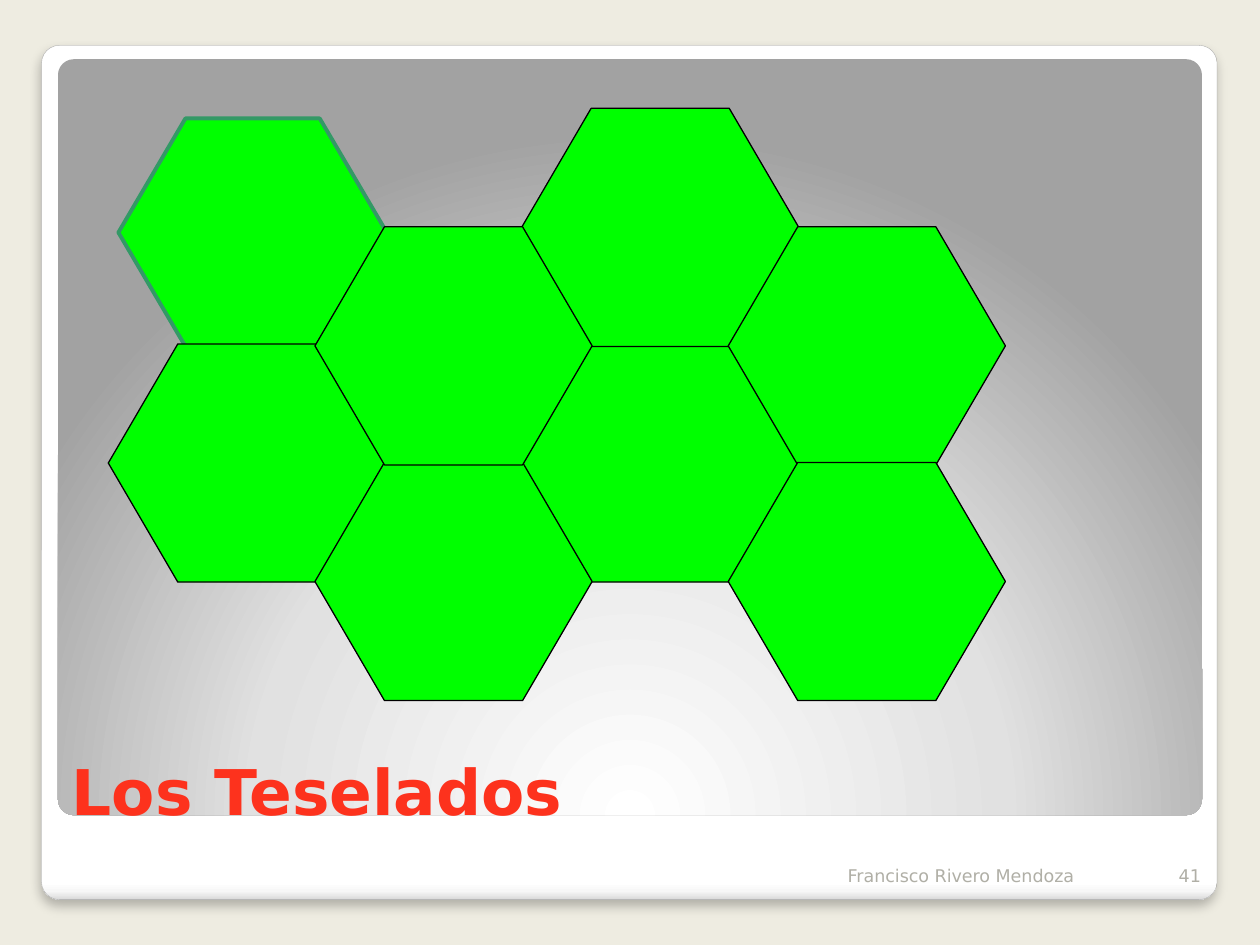
from dataclasses import dataclass

from lxml import etree
from pptx import Presentation
from pptx import util as u
from pptx.dml.color import RGBColor
from pptx.enum import shapes, text
from pptx.oxml import parse_xml
from pptx.oxml.ns import nsdecls, qn

FONT = "DejaVu Sans"
GREEN, BLACK, TEAL = "00FF00", "000000", "339966"
RED, GREY = "FD321D", "B0AFA6"
COL_STEP, ROW_STEP, ODD_DROP = 1.64, 1.87, 0.94


@dataclass
class Box:
    left: float
    top: float
    width: float
    height: float

    def lengths(self) -> list:
        return [u.Inches(v) for v in (self.left, self.top, self.width, self.height)]


@dataclass
class Hexagon:
    box: Box
    adj: float = 0.292
    line: str = BLACK
    line_width: float = 0.75


@dataclass
class Footer:
    box: Box
    words: str
    align: text.PP_ALIGN


def rgb(value: str) -> RGBColor:
    return RGBColor.from_string(value)


def tile(col: int, row: int) -> Hexagon:
    """Place a hexagon on the honeycomb; odd columns sit half a cell lower."""
    top = 0.86 + ROW_STEP * row + ODD_DROP * (col % 2)
    return Hexagon(Box(0.86 + COL_STEP * col, top, 2.2, 1.89))


def add_panel(s, box: Box, stops: list, direction: str):
    sp = s.shapes.add_shape(shapes.MSO_SHAPE.ROUNDED_RECTANGLE, *box.lengths())
    sp.adjustments[0] = 0.021
    sp.shadow.inherit = False
    sp.line.fill.background()
    gs = "".join(f'<a:gs pos="{pos * 1000}"><a:srgbClr val="{color}"/></a:gs>'
                 for pos, color in stops)
    grad = parse_xml(f'<a:gradFill {nsdecls("a")} rotWithShape="1">'
                     f'<a:gsLst>{gs}</a:gsLst>{direction}</a:gradFill>')
    sp.element.spPr.find(qn("a:prstGeom")).addnext(grad)
    return sp


def add_soft_shadow(sp) -> None:
    effects = sp.element.spPr.find(qn("a:effectLst"))
    shadow = etree.SubElement(effects, qn("a:outerShdw"), blurRad=str(u.Pt(6)),
                              dist=str(u.Pt(4)), dir="5400000",
                              algn="t", rotWithShape="0")
    color = etree.SubElement(shadow, qn("a:srgbClr"), val=BLACK)
    etree.SubElement(color, qn("a:alpha"), val="25000")


def add_hexagon(s, h: Hexagon) -> None:
    sp = s.shapes.add_shape(shapes.MSO_SHAPE.HEXAGON, *h.box.lengths())
    sp.adjustments[0] = h.adj
    sp.adjustments[1] = 1.1547
    sp.shadow.inherit = False
    sp.fill.solid()
    sp.fill.fore_color.rgb = rgb(GREEN)
    sp.line.color.rgb = rgb(h.line)
    sp.line.width = u.Pt(h.line_width)


def write(sp, words: str, size: float, color: str,
          align: text.PP_ALIGN, bold: bool = False) -> None:
    tf = sp.text_frame
    tf.word_wrap = True
    tf.auto_size = text.MSO_AUTO_SIZE.NONE
    tf.vertical_anchor = text.MSO_ANCHOR.BOTTOM
    p = tf.paragraphs[0]
    p.alignment = align
    r = p.add_run()
    r.text = words
    r.font.name = FONT
    r.font.size = u.Pt(size)
    r.font.bold = bold
    r.font.color.rgb = rgb(color)


def add_title(s, box: Box, words: str) -> None:
    title = s.shapes.title
    title.left, title.top, title.width, title.height = box.lengths()
    write(title, words, 36, RED, text.PP_ALIGN.LEFT, bold=True)
    s.shapes.element.append(title.element)  # in front of the panels


def add_footer(s, f: Footer) -> None:
    write(s.shapes.add_textbox(*f.box.lengths()), f.words, 10, GREY, f.align)


def main() -> None:
    prs = Presentation()
    prs.slide_width, prs.slide_height = u.Inches(10), u.Inches(7.5)
    s = prs.slides.add_slide(prs.slide_layouts[5])
    s.background.fill.solid()
    s.background.fill.fore_color.rgb = rgb("EEECE1")

    card = add_panel(s, Box(0.33, 0.36, 9.33, 6.78),
                     [(0, "FFFFFF"), (98, "FFFFFF"), (99, "F7F7F7"), (100, "DADADA")],
                     '<a:lin ang="5400000" scaled="0"/>')
    card.line.color.rgb = rgb("A4A4A4")
    card.line.width = u.Pt(0.16)
    add_soft_shadow(card)
    add_panel(s, Box(0.46, 0.47, 9.08, 6),
              [(0, "FFFFFF"), (55, "E1E1E1"), (100, "A2A2A2")],
              '<a:path path="circle"><a:fillToRect l="50000" t="175000" '
              'r="50000" b="-75000"/></a:path>')

    add_title(s, Box(0.47, 5.47, 8.95, 1.15), "Los Teselados")

    add_hexagon(s, Hexagon(Box(0.94, 0.94, 2.13, 1.81), 0.294, TEAL, 2.25))
    for col, row in [(0, 1), (2, 1), (1, 1), (2, 0), (1, 0), (3, 0), (3, 1)]:
        add_hexagon(s, tile(col, row))

    add_footer(s, Footer(Box(9.13, 6.68, 0.5, 0.4), "41", text.PP_ALIGN.RIGHT))
    add_footer(s, Footer(Box(6.63, 6.68, 2.5, 0.4), "Francisco Rivero Mendoza",
                         text.PP_ALIGN.LEFT))
    prs.save("out.pptx")


if __name__ == "__main__":
    main()
